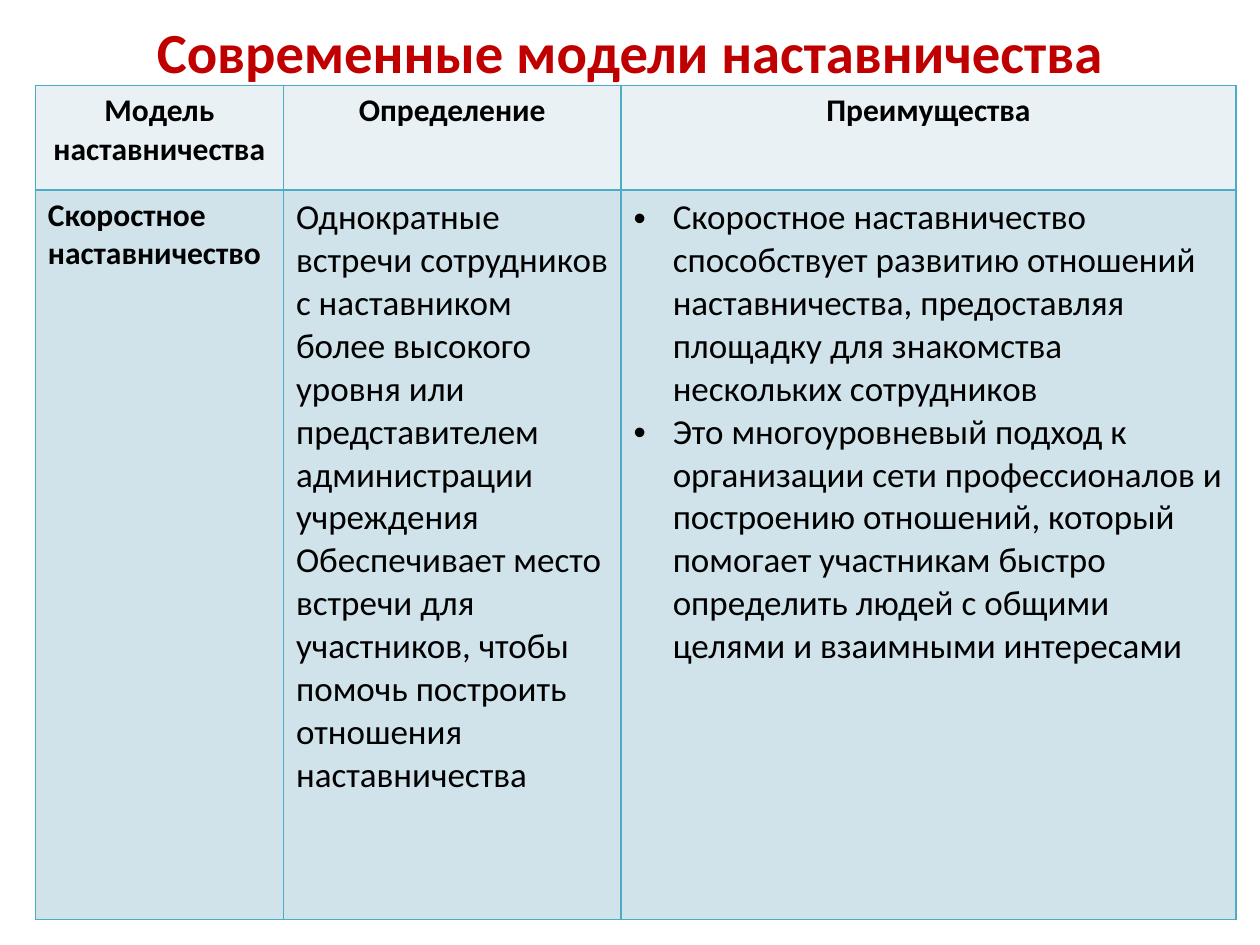
from lxml.etree import SubElement as Sub
from pptx import Presentation
from pptx.dml.color import RGBColor as Rgb
from pptx.enum.text import MSO_ANCHOR as Anchor, PP_ALIGN as Align
from pptx.oxml.ns import qn
from pptx.util import Inches as Inch, Pt

HUES = {"title": "C00000", "text": "000000", "line": "4BACC6",
        "head": "E9F1F5", "body": "D0E3EA"}
FONT = "Calibri"
COLS = [1.97, 2.68, 4.88]
ROWS = [0.83, 5.79]
HEADS = ["Модель наставничества", "Определение", "Преимущества"]
MODEL = ["Скоростное", "наставничество"]
SENSE = ["Однократные встречи сотрудников с наставником более высокого уровня "
         "или представителем администрации учреждения Обеспечивает место "
         "встречи для участников, чтобы помочь построить отношения "
         "наставничества"]
GAINS = ["Скоростное наставничество способствует развитию отношений "
         "наставничества, предоставляя площадку для знакомства нескольких "
         "сотрудников",
         "Это многоуровневый подход к организации сети профессионалов и "
         "построению отношений, который помогает участникам быстро "
         "определить людей с общими целями и взаимными интересами"]


def style(para, size, bold, hue="text", align=Align.LEFT):
    """Format a paragraph and its runs."""
    para.alignment = align
    for run in para.runs:
        font = run.font
        font.name, font.size, font.bold = FONT, Pt(size), bold
        font.color.rgb = Rgb.from_string(HUES[hue])


def bullet(para):
    """Give a paragraph a bullet with a hanging indent."""
    props = para._p.get_or_add_pPr()
    props.set("marL", str(Inch(0.31)))
    props.set("indent", str(-Inch(0.31)))
    Sub(props, qn("a:buFont")).set("typeface", "Arial")
    Sub(props, qn("a:buChar")).set("char", "•")


def frame(cell):
    """Draw a thin line on each side of a cell."""
    props = cell._tc.get_or_add_tcPr()
    for side in ("L", "R", "T", "B"):
        line = Sub(props, qn("a:ln" + side), w=str(Pt(1)))
        fill = Sub(line, qn("a:solidFill"))
        Sub(fill, qn("a:srgbClr")).set("val", HUES["line"])


def write(cell, lines, size, bold, fill, align=Align.LEFT, marks=False):
    """Fill a cell with lines of text."""
    frame(cell)
    cell.fill.solid()
    cell.fill.fore_color.rgb = Rgb.from_string(HUES[fill])
    cell.text_frame.text = "\n".join(lines)
    for para in cell.text_frame.paragraphs:
        style(para, size, bold, align=align)
        if marks:
            bullet(para)


def add_title(slide, text):
    """Place the heading in the title placeholder."""
    title = slide.shapes.title
    title.left, title.top = Inch(0.5), Inch(0.21)
    title.width, title.height = Inch(9), Inch(0.39)
    box = title.text_frame
    box.text = text
    box.vertical_anchor = Anchor.MIDDLE
    style(box.paragraphs[0], 32.4, True, "title", Align.CENTER)


def add_grid(slide):
    """Add the table of models."""
    table = slide.shapes.add_table(
        len(ROWS), len(COLS), Inch(0.28), Inch(0.68),
        Inch(sum(COLS)), Inch(sum(ROWS))).table
    for col, width in zip(table.columns, COLS):
        col.width = Inch(width)
    for row, height in zip(table.rows, ROWS):
        row.height = Inch(height)
    for col, head in enumerate(HEADS):
        write(table.cell(0, col), [head], 18, True, "head", Align.CENTER)
    write(table.cell(1, 0), MODEL, 18, True, "body")
    write(table.cell(1, 1), SENSE, 20, False, "body")
    write(table.cell(1, 2), GAINS, 20, False, "body", marks=True)


def main():
    """Build and save the slide."""
    deck = Presentation()
    deck.slide_width, deck.slide_height = Inch(10), Inch(7.5)
    slide = deck.slides.add_slide(deck.slide_layouts[5])
    add_title(slide, "Современные модели наставничества")
    add_grid(slide)
    deck.save("out.pptx")


if __name__ == "__main__":
    main()
